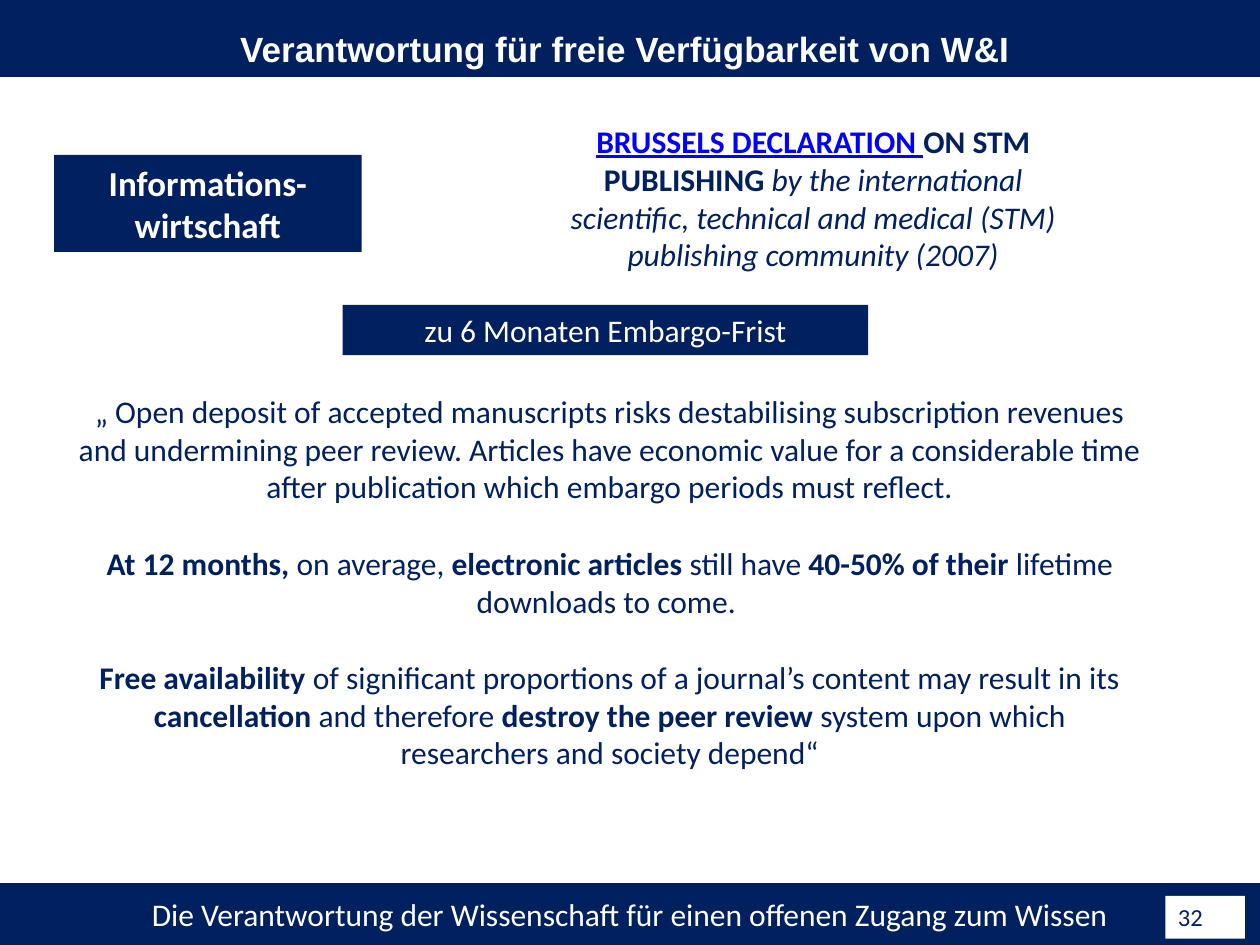
from pptx import Presentation
from pptx.dml.color import RGBColor
from pptx.enum.shapes import MSO_SHAPE
from pptx.enum.text import MSO_ANCHOR, MSO_AUTO_SIZE, PP_ALIGN
from pptx.util import Inches, Pt

NAVY = RGBColor(0x00, 0x20, 0x60)
WHITE = RGBColor(0xFF, 0xFF, 0xFF)
LINK = RGBColor(0x00, 0x00, 0xFF)


class Deck:
    """Slide builder with a shared style; boxes are percent shares of the slide."""

    font = "Calibri"
    size = 18

    def __init__(self):
        self.prs = Presentation()
        self.prs.slide_width, self.prs.slide_height = Inches(10), Inches(7.5)
        self.s = self.prs.slides.add_slide(self.prs.slide_layouts[1])

    def box(self, left, top, width, height):
        w, h = self.prs.slide_width, self.prs.slide_height
        return [int(share * side / 100)
                for share, side in ((left, w), (top, h), (width, w), (height, h))]

    def place(self, sp, box):
        sp.left, sp.top, sp.width, sp.height = self.box(*box)

    def fill(self, sp, color):
        sp.fill.solid()
        sp.fill.fore_color.rgb = color

    def set_text(self, sp, paragraphs, color, size=None, font=None, bold=None,
                 align=PP_ALIGN.CENTER, anchor=MSO_ANCHOR.TOP, gap=0, spacing=1.0):
        tf = sp.text_frame
        tf.word_wrap, tf.auto_size = True, MSO_AUTO_SIZE.NONE
        tf.vertical_anchor = anchor
        for i, runs in enumerate(paragraphs):
            p = tf.add_paragraph() if i else tf.paragraphs[0]
            p.alignment, p.line_spacing = align, spacing
            p.space_before, p.space_after = Pt(gap if i else 0), Pt(0)
            p.font.name, p.font.size = font or self.font, Pt(size or self.size)
            p.font.color.rgb, p.font.bold = color, bold
            for text, marks in runs:
                r = p.add_run()
                r.text = text
                if "b" in marks:
                    r.font.bold = True
                if "i" in marks:
                    r.font.italic = True
                if "u" in marks:
                    r.font.underline = True
                    r.font.color.rgb = LINK
        return tf

    def title(self, text, box):
        sp = self.s.shapes.title
        self.place(sp, box)
        self.fill(sp, NAVY)
        self.set_text(sp, [[(text, "")]], WHITE, 20, "Arial", True, spacing=1.5)

    def body(self, paragraphs, box, gap):
        sp = self.s.placeholders[1]
        self.place(sp, box)
        tf = self.set_text(sp, paragraphs, NAVY, gap=gap)
        for p in tf.paragraphs:
            pPr = p._p.get_or_add_pPr()
            pPr.set("marL", "0")
            pPr.set("indent", "0")
            bullet = pPr.makeelement(
                "{http://schemas.openxmlformats.org/drawingml/2006/main}buNone", {})
            pPr.insert_element_before(bullet, "a:tabLst", "a:defRPr", "a:extLst")

    def panel(self, text, box, back=NAVY, color=WHITE, **style):
        sp = self.s.shapes.add_shape(MSO_SHAPE.RECTANGLE, *self.box(*box))
        sp.shadow.inherit = False
        sp.line.fill.background()
        self.fill(sp, back)
        return self.set_text(sp, [[(text, "")]], color, **style)

    def note(self, runs, box):
        self.set_text(self.s.shapes.add_textbox(*self.box(*box)), [runs], NAVY)


def main():
    deck = Deck()
    footer = deck.panel(
        "Die Verantwortung der Wissenschaft für einen offenen Zugang zum Wissen",
        (0, 93.47, 100, 6.53), anchor=MSO_ANCHOR.MIDDLE)
    footer.margin_left = footer.margin_right = 0
    footer.margin_top = footer.margin_bottom = 0
    deck.panel("32", (92.5, 94.8, 6.3, 4.53), WHITE, NAVY,
               size=14, align=PP_ALIGN.LEFT)
    deck.title("Verantwortung für freie Verfügbarkeit von W&I ", (0, 0, 100, 8.13))
    deck.panel("Informations-wirtschaft", (4.3, 16.4, 24.4, 10.27), size=20, bold=True)
    deck.panel("zu 6 Monaten Embargo-Frist", (27.2, 32.27, 41.7, 5.33))
    deck.note([
        ("BRUSSELS DECLARATION ", "bu"),
        ("ON STM PUBLISHING ", "b"),
        ("by the international scientific, technical and medical (STM) "
         "publishing community (2007)", "i"),
    ], (43.7, 12.27, 41.7, 17.47))
    deck.body([
        [("„ Open deposit of accepted manuscripts risks destabilising subscription "
          "revenues and undermining peer review. Articles have economic value for a "
          "considerable time after publication which embargo periods must reflect.", "")],
        [("At 12 months, ", "b"), ("on average, ", ""),
         ("electronic articles ", "b"), ("still have ", ""),
         ("40-50% of their ", "b"), ("lifetime downloads to come. ", "")],
        [("Free availability ", "b"),
         ("of significant proportions of a journal’s content may result in its ", ""),
         ("cancellation", "b"), (" and therefore ", ""),
         ("destroy the peer review ", "b"),
         ("system upon which researchers and society depend“", "")],
    ], (5.1, 40.8, 86.6, 41.73), gap=22)
    deck.prs.save("out.pptx")


if __name__ == "__main__":
    main()
